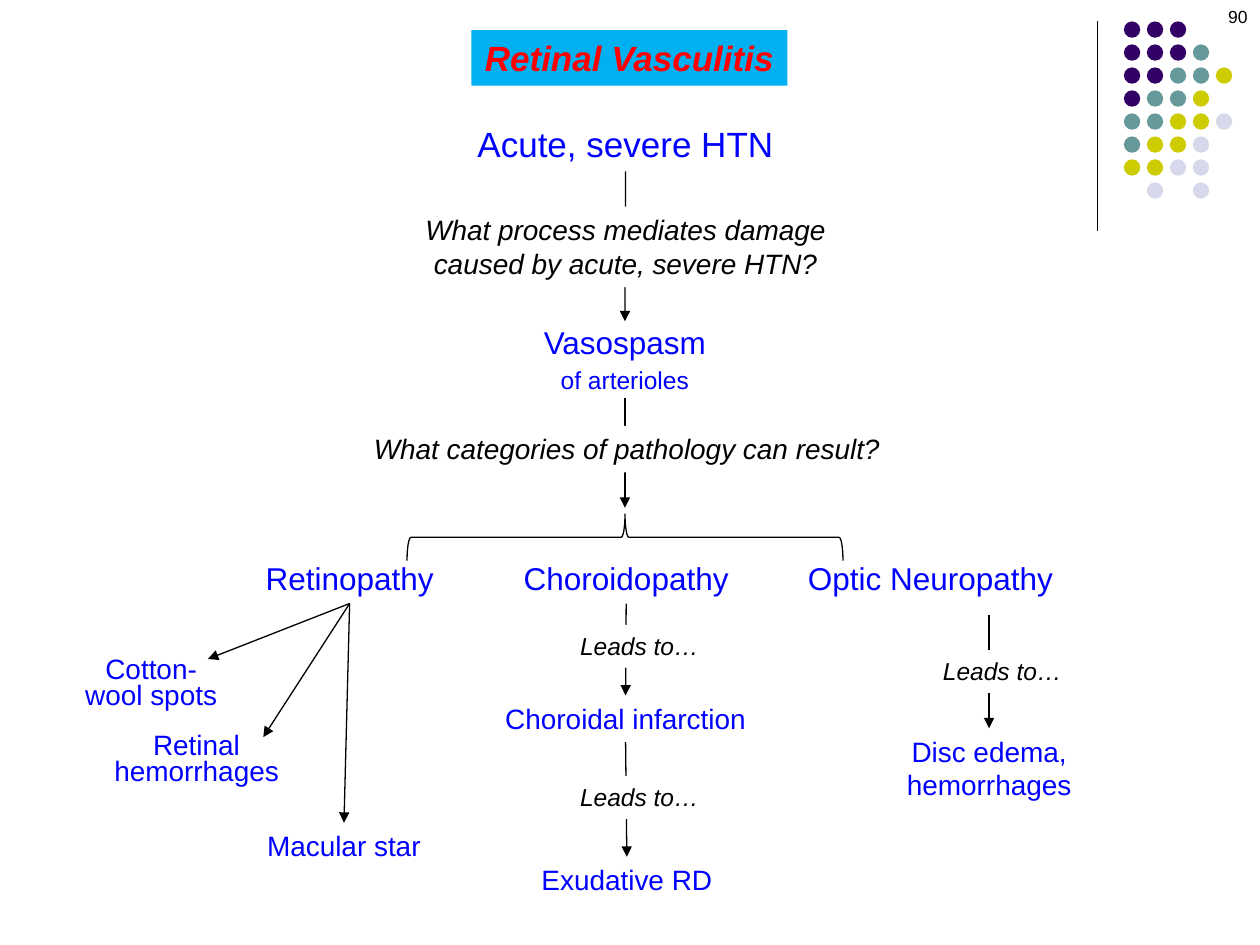
from lxml.etree import SubElement
from pptx import Presentation
from pptx.dml.color import RGBColor
from pptx.enum.shapes import MSO_CONNECTOR as Connector, MSO_SHAPE as Shape
from pptx.enum.text import PP_ALIGN as Align
from pptx.oxml.ns import qn
from pptx.util import Inches, Pt

BLACK = RGBColor(0x00, 0x00, 0x00)
WHITE = RGBColor(0xFF, 0xFF, 0xFF)
BLUE = RGBColor(0x00, 0x00, 0xFF)
RED = RGBColor(0xFF, 0x00, 0x00)
SKY = RGBColor(0x00, 0xB0, 0xF0)
DOT_COLORS = {
    "P": RGBColor(0x33, 0x00, 0x66),
    "T": RGBColor(0x66, 0x99, 0x99),
    "Y": RGBColor(0xCC, 0xCC, 0x00),
    "L": RGBColor(0xD8, 0xD8, 0xEC),
}
DOT_ROWS = ["PPP", "PPPT", "PPTTY", "PTTY", "TTYYL", "TYYL", "YYLL", " L L"]
TOP, BOTTOM = 0, 2


def add_label(slide, box, lines, size, color=BLUE, fill=None, align=Align.CENTER,
              wrap=False, spacing=None, bold=False, italic=False):
    """Place one paragraph per line; a line may be a (text, size) pair."""
    label = slide.shapes.add_textbox(*map(Inches, box))
    if fill is not None:
        label.fill.solid()
        label.fill.fore_color.rgb = fill
    frame = label.text_frame
    frame.word_wrap = wrap
    for index, line in enumerate(lines):
        text, line_size = line if isinstance(line, tuple) else (line, size)
        paragraph = frame.paragraphs[0] if index == 0 else frame.add_paragraph()
        paragraph.alignment = align
        if spacing:
            paragraph.line_spacing = Pt(spacing)
        run = paragraph.add_run()
        run.text = text
        font = run.font
        font.name, font.size = "Arial", Pt(line_size)
        font.bold, font.italic = bold, italic
        font.color.rgb = color
    return label


def add_question(slide, box, text, size=16, wrap=True):
    """Place a white box that interrupts the arrow behind it."""
    add_label(slide, box, [text], size, BLACK, WHITE, wrap=wrap, italic=True)


def add_line(slide, start, end, arrow=True):
    """Draw a line; each end is a point or a (shape, side) pair to join."""
    points = [(0, 0) if hasattr(spot[0], "shape_id") else spot for spot in (start, end)]
    line = slide.shapes.add_connector(
        Connector.STRAIGHT, *(Inches(value) for point in points for value in point))
    for spot, join in ((start, line.begin_connect), (end, line.end_connect)):
        if hasattr(spot[0], "shape_id"):
            join(*spot)
    line.line.color.rgb = BLACK
    line.line.width = Pt(0.75)
    if arrow:
        SubElement(line.line._get_or_add_ln(), qn("a:tailEnd"), type="triangle")
    SubElement(line._element.spPr, qn("a:effectLst"))


def add_dot_ornament(slide, left, top, pitch, diameter):
    add_line(slide, (left - 0.21, top), (left - 0.21, top + 1.66), arrow=False)
    for row, codes in enumerate(DOT_ROWS):
        for column, code in enumerate(codes):
            if code == " ":
                continue
            dot = slide.shapes.add_shape(
                Shape.OVAL, Inches(left + column * pitch), Inches(top + row * pitch),
                Inches(diameter), Inches(diameter))
            dot.shadow.inherit = False
            dot.fill.solid()
            dot.fill.fore_color.rgb = DOT_COLORS[code]
            dot.line.fill.background()


def add_brace(slide, left, top, width, height):
    """Draw an upward-pointing brace that fills the given box."""
    brace = slide.shapes.add_shape(
        Shape.LEFT_BRACE, Inches(left + (width - height) / 2),
        Inches(top + (height - width) / 2), Inches(height), Inches(width))
    brace.rotation = 90
    brace.shadow.inherit = False
    brace.fill.background()
    brace.line.color.rgb = BLACK
    brace.line.width = Pt(0.75)


def add_heading(slide):
    add_label(slide, (7.67, 0, 2.33, 0.5), ["90"], 10, BLACK, align=Align.RIGHT, wrap=True)
    add_label(slide, (3.74, 0.24, 2.51, 0.44), ["Retinal Vasculitis"], 20, RED, SKY,
              bold=True, italic=True)


def add_cause_chain(slide):
    cause = add_label(slide, (3.68, 0.92, 2.57, 0.44), ["Acute, severe HTN"], 20)
    process = add_label(slide, (4.21, 2.55, 1.5, 0.61),
                        ["Vasospasm", ("of arterioles", 14)], 18, fill=WHITE, spacing=19)
    add_line(slide, (cause, BOTTOM), (process, TOP))
    add_line(slide, (process, BOTTOM), (4.96, 4.03))
    add_question(slide, (3.13, 1.64, 3.67, 0.64),
                 "What process mediates damage caused by acute, severe HTN?")
    add_question(slide, (2.82, 3.38, 4.31, 0.37), "What categories of pathology can result?")
    add_brace(slide, 3.23, 4.08, 3.46, 0.37)


def add_retinopathy(slide):
    category = add_label(slide, (2, 4.39, 1.55, 0.4), ["Retinopathy"], 18)
    add_label(slide, (0.57, 5.18, 1.26, 0.52), ["Cotton-", "wool spots"], 16, spacing=15)
    add_label(slide, (0.8, 5.78, 1.52, 0.52), ["Retinal", "hemorrhages"], 16, spacing=15)
    star = add_label(slide, (2.01, 6.53, 1.44, 0.37), ["Macular star"], 16)
    for end in ((1.65, 5.23), (2.09, 5.85), (star, TOP)):
        add_line(slide, (category, BOTTOM), end)


def add_choroidopathy(slide):
    category = add_label(slide, (4.05, 4.39, 1.84, 0.4), ["Choroidopathy"], 18)
    infarction = add_label(slide, (3.9, 5.52, 2.13, 0.37), ["Choroidal infarction"], 16)
    detachment = add_label(slide, (4.19, 6.8, 1.57, 0.37), ["Exudative RD"], 16)
    add_line(slide, (category, BOTTOM), (infarction, TOP))
    add_line(slide, (infarction, BOTTOM), (detachment, TOP))
    for top in (4.96, 6.16):
        add_question(slide, (4.5, top, 1.15, 0.34), "Leads to…", 14, wrap=False)


def add_optic_neuropathy(slide):
    add_label(slide, (6.3, 4.39, 2.17, 0.4), ["Optic Neuropathy"], 18)
    edema = add_label(slide, (7.09, 5.78, 1.52, 0.64), ["Disc edema,", "hemorrhages"], 16)
    add_line(slide, (7.85, 4.88), (edema, TOP))
    add_question(slide, (7.38, 5.16, 1.15, 0.34), "Leads to…", 14, wrap=False)


def main():
    presentation = Presentation()
    presentation.slide_width = Inches(10)
    presentation.slide_height = Inches(7.5)
    slide = presentation.slides.add_slide(presentation.slide_layouts[6])
    add_dot_ornament(slide, left=8.92, top=0.17, pitch=0.73 / 4, diameter=0.13)
    add_heading(slide)
    add_cause_chain(slide)
    add_retinopathy(slide)
    add_choroidopathy(slide)
    add_optic_neuropathy(slide)
    presentation.save("out.pptx")


if __name__ == "__main__":
    main()
